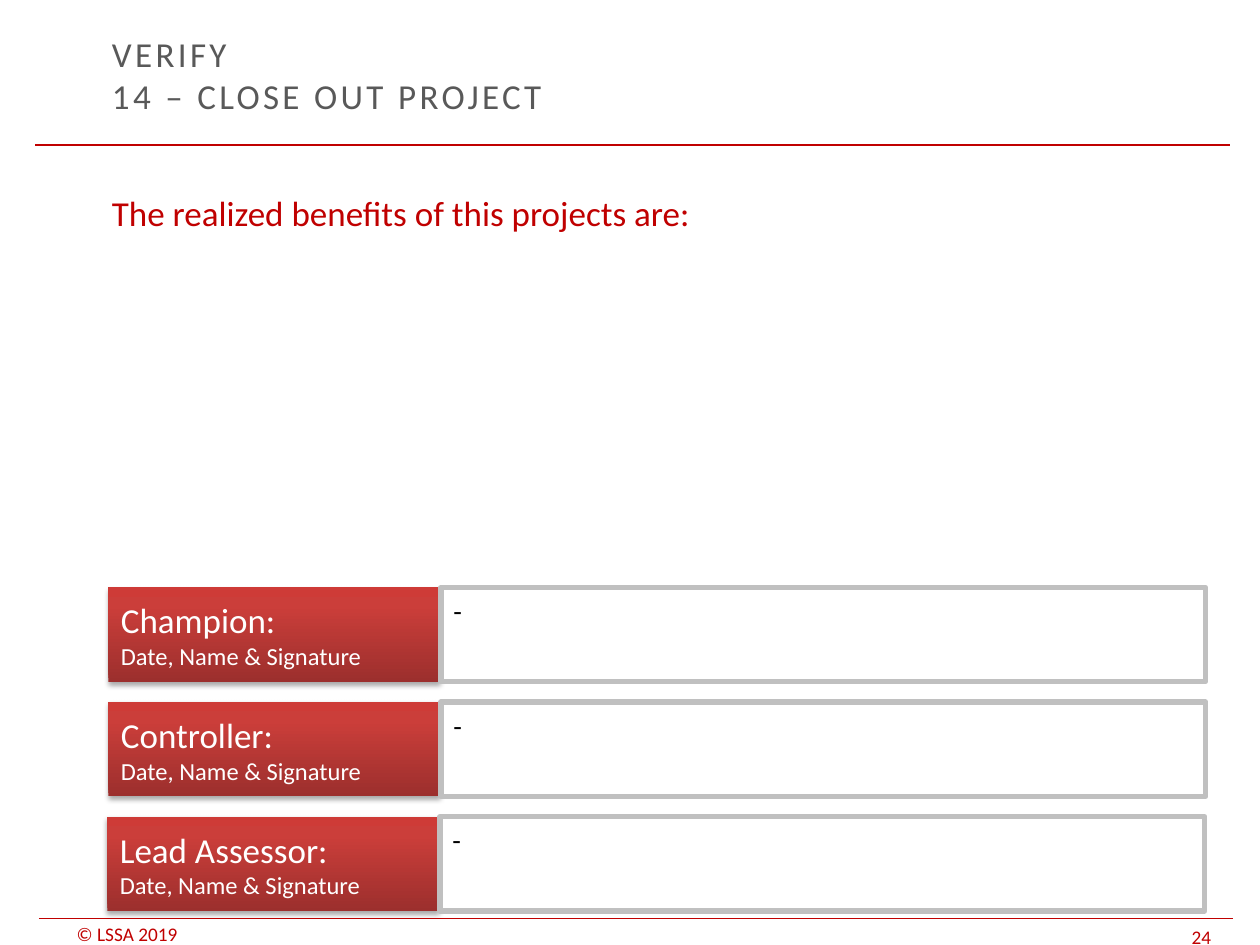
from copy import deepcopy

from lxml.etree import SubElement
from pptx import Presentation
from pptx.dml.color import RGBColor
from pptx.enum.shapes import MSO_CONNECTOR, MSO_SHAPE
from pptx.enum.text import MSO_ANCHOR, PP_ALIGN
from pptx.oxml.ns import qn
from pptx.util import Pt

RED = "C00000"
GRADIENT = [(0, "9C2F2D"), (0.8, "CB3E3A"), (1, "CE3B37")]
ROW_HEIGHT = 54
ROW_PITCH = 65.5
FIRST_ROW_TOP = 335.6
LABEL_WIDTH = 189.4
ANSWER_WIDTH = 437
SIGNATORIES = [("Champion:", 62), ("Controller:", 62), ("Lead Assessor:", 61.4)]


def color(hex_string):
    return RGBColor.from_string(hex_string)


def style(paragraph, size, hex_color):
    paragraph.alignment = PP_ALIGN.LEFT
    paragraph.font.name = "Calibri"
    paragraph.font.size = Pt(size)
    paragraph.font.color.rgb = color(hex_color)


def add_text(slide, text, box, size, hex_color, anchor=MSO_ANCHOR.TOP, wrap=True):
    shape = slide.shapes.add_textbox(*map(Pt, box))
    frame = shape.text_frame
    frame.word_wrap = wrap
    frame.vertical_anchor = anchor
    frame.text = text
    style(frame.paragraphs[0], size, hex_color)
    return frame


def add_title(slide, text):
    frame = add_text(slide, text, (56.9, 18.7, 510.5, 47.5), 20, "595959", MSO_ANCHOR.MIDDLE)
    for run in frame.paragraphs[0].runs:
        run.font.size = Pt(20)
        run.font._element.set("spc", "190")


def add_footer(slide, text, box):
    frame = add_text(slide, text, box, 11, RED, MSO_ANCHOR.BOTTOM, wrap=False)
    frame.margin_top = frame.margin_bottom = 0


def add_rule(slide, left, top, width=682.5):
    line = slide.shapes.add_connector(
        MSO_CONNECTOR.STRAIGHT, Pt(left), Pt(top), Pt(left + width), Pt(top))
    line.line.color.rgb = color(RED)
    line.line.width = Pt(0.75)
    SubElement(line._element.spPr, qn("a:effectLst"))


def add_rectangle(slide, left, top, width):
    shape = slide.shapes.add_shape(
        MSO_SHAPE.RECTANGLE, Pt(left), Pt(top), Pt(width), Pt(ROW_HEIGHT))
    shape.shadow.inherit = False
    shape.text_frame.word_wrap = True
    return shape


def fill_gradient(shape):
    """Fill from dark at the bottom to light at the top."""
    shape.fill.gradient()
    shape.fill.gradient_angle = 90
    stop_list = shape._element.spPr.find(qn("a:gradFill")).find(qn("a:gsLst"))
    stop_list.append(deepcopy(stop_list[0]))
    for stop, (position, hex_color) in zip(shape.fill.gradient_stops, GRADIENT):
        stop.position = position
        stop.color.rgb = color(hex_color)


def add_shadow(shape):
    effects = shape._element.spPr.find(qn("a:effectLst"))
    shadow = SubElement(effects, qn("a:outerShdw"), blurRad=str(Pt(3.1)),
                        dist=str(Pt(1.8)), dir="5400000", rotWithShape="0")
    shade = SubElement(shadow, qn("a:srgbClr"), val="000000")
    SubElement(shade, qn("a:alpha"), val="35000")


def add_label(slide, role, left, top):
    shape = add_rectangle(slide, left, top, LABEL_WIDTH)
    fill_gradient(shape)
    shape.line.fill.background()
    add_shadow(shape)
    frame = shape.text_frame
    frame.vertical_anchor = MSO_ANCHOR.MIDDLE
    frame.text = f"{role}\nDate, Name & Signature"
    for paragraph, size in zip(frame.paragraphs, (20, 14)):
        style(paragraph, size, "FFFFFF")


def add_answer(slide, left, top):
    shape = add_rectangle(slide, left, top, ANSWER_WIDTH)
    shape.fill.solid()
    shape.fill.fore_color.rgb = color("FFFFFF")
    shape.line.color.rgb = color("C0C0C0")
    shape.line.width = Pt(3)
    frame = shape.text_frame
    frame.vertical_anchor = MSO_ANCHOR.TOP
    frame.text = "-"
    style(frame.paragraphs[0], 16, "000000")


def main():
    presentation = Presentation()
    presentation.slide_width = Pt(720)
    presentation.slide_height = Pt(540)
    slide = presentation.slides.add_slide(presentation.slide_layouts[6])

    add_footer(slide, "© LSSA 2019", (36.7, 527, 102.2, 13))
    add_footer(slide, "24", (673.9, 526.3, 46.1, 15.8))
    add_rule(slide, 20.2, 82.8)
    add_rule(slide, 22.3, 524.9)
    add_title(slide, "VERIFY\v14 – CLOSE OUT PROJECT")
    add_text(slide, "The realized benefits of this projects are:",
             (56.9, 105.8, 623.5, 396.7), 20, RED)

    for row, (role, left) in enumerate(SIGNATORIES):
        top = FIRST_ROW_TOP + row * ROW_PITCH
        add_label(slide, role, left, top)
        add_answer(slide, left + LABEL_WIDTH + 0.6, top)

    presentation.save("out.pptx")


if __name__ == "__main__":
    main()
